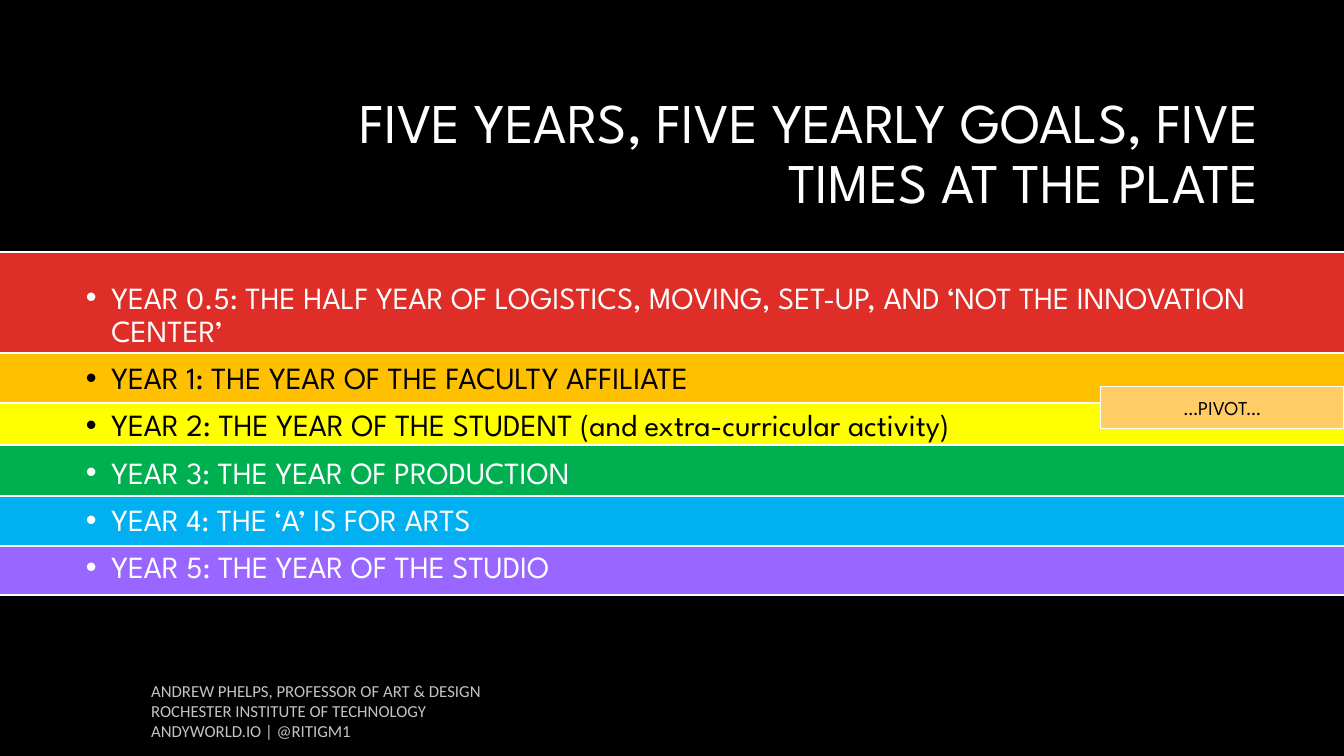
from dataclasses import dataclass

from lxml.etree import SubElement
from pptx import Presentation
from pptx.dml.color import RGBColor
from pptx.enum.shapes import MSO_CONNECTOR, MSO_SHAPE
from pptx.enum.text import MSO_ANCHOR, MSO_AUTO_SIZE, PP_ALIGN
from pptx.oxml.ns import qn
from pptx.util import Cm, Pt

SLIDE_WIDTH, SLIDE_HEIGHT = 33.87, 19.05
HEADING_FONT = "League Spartan"
WHITE, BLACK = "FFFFFF", "000000"
INDENT = Cm(0.64)


@dataclass
class Year:
    goal: str
    top: float
    fill: str
    ink: str = WHITE


YEARS = [
    Year("YEAR 0.5: THE HALF YEAR OF LOGISTICS, MOVING, SET-UP, AND ‘NOT THE INNOVATION CENTER’",
         6.35, "DF2E28"),
    Year("YEAR 1: THE YEAR OF THE FACULTY AFFILIATE", 8.89, "FFC000", BLACK),
    Year("YEAR 2: THE YEAR OF THE STUDENT (and extra-curricular activity)",
         10.16, "FFFF00", BLACK),
    Year("YEAR 3: THE YEAR OF PRODUCTION", 11.22, "00B050"),
    Year("YEAR 4: THE ‘A’ IS FOR ARTS", 12.49, "00B0F0"),
    Year("YEAR 5: THE YEAR OF THE STUDIO", 13.76, "9966FF"),
]
BANDS_BOTTOM = 14.99
EDGES = [year.top for year in YEARS] + [BANDS_BOTTOM]


def rgb(hex_code: str) -> RGBColor:
    return RGBColor.from_string(hex_code)


def place(shape, left: float, top: float, width: float, height: float) -> None:
    shape.left, shape.top = Cm(left), Cm(top)
    shape.width, shape.height = Cm(width), Cm(height)


def format_paragraph(paragraph, size: float, color: str, font: str = HEADING_FONT) -> None:
    for run in paragraph.runs:
        run.font.size = Pt(size)
        run.font.name = font
        run.font.color.rgb = rgb(color)


def add_box(slide, left: float, top: float, width: float, height: float, fill: str):
    """Add a filled rectangle without outline or shadow."""
    box = slide.shapes.add_shape(
        MSO_SHAPE.RECTANGLE, Cm(left), Cm(top), Cm(width), Cm(height))
    box.shadow.inherit = False
    box.fill.solid()
    box.fill.fore_color.rgb = rgb(fill)
    box.line.fill.background()
    return box


def add_rule(slide, top: float) -> None:
    """Add a white line across the whole slide."""
    rule = slide.shapes.add_connector(
        MSO_CONNECTOR.STRAIGHT, Cm(0), Cm(top), Cm(SLIDE_WIDTH), Cm(top))
    rule.line.color.rgb = rgb(WHITE)
    rule.line.width = Pt(1.25)
    SubElement(rule.element.spPr, qn("a:effectLst"))


def add_bullet(paragraph) -> None:
    properties = paragraph._p.get_or_add_pPr()
    properties.set("marL", str(INDENT))
    properties.set("indent", str(-INDENT))
    SubElement(properties, qn("a:buChar")).set("char", "•")


def add_footer(slide) -> None:
    footer = slide.shapes.add_textbox(Cm(3.81), Cm(17.15), Cm(18.42), Cm(1.27))
    frame = footer.text_frame
    frame.word_wrap = True
    frame.margin_left = frame.margin_top = frame.margin_right = frame.margin_bottom = 0
    frame.text = ("ANDREW PHELPS, PROFESSOR OF ART & DESIGN\n"
                  "ROCHESTER INSTITUTE OF TECHNOLOGY\n"
                  "ANDYWORLD.IO | @RITIGM1")
    for paragraph in frame.paragraphs:
        format_paragraph(paragraph, 12, "C4C4C4", "Calibri")


def fill_title(title) -> None:
    place(title, 8.05, 2.13, 23.93, 3.58)
    frame = title.text_frame
    frame.text = "FIVE YEARS, FIVE YEARLY GOALS, FIVE TIMES AT THE PLATE"
    frame.auto_size = MSO_AUTO_SIZE.NONE
    frame.vertical_anchor = MSO_ANCHOR.MIDDLE
    paragraph = frame.paragraphs[0]
    paragraph.alignment = PP_ALIGN.RIGHT
    paragraph.line_spacing = 0.9
    format_paragraph(paragraph, 40, WHITE)


def fill_goals(goals) -> None:
    place(goals, 1.91, 6.99, 30.05, 8.08)
    frame = goals.text_frame
    frame.text = "\n".join(year.goal for year in YEARS)
    frame.auto_size = MSO_AUTO_SIZE.NONE
    frame.vertical_anchor = MSO_ANCHOR.TOP
    for index, (paragraph, year) in enumerate(zip(frame.paragraphs, YEARS)):
        add_bullet(paragraph)
        paragraph.line_spacing = 0.9
        paragraph.space_before = Pt(10 if index else 0)
        format_paragraph(paragraph, 22, year.ink)


def add_pivot(slide) -> None:
    pivot = add_box(slide, 27.73, 9.74, 6.14, 1.06, "FFCC66")
    pivot.line.color.rgb = rgb(WHITE)
    pivot.line.width = Pt(1)
    frame = pivot.text_frame
    frame.text = "…PIVOT…"
    frame.vertical_anchor = MSO_ANCHOR.MIDDLE
    frame.paragraphs[0].alignment = PP_ALIGN.CENTER
    format_paragraph(frame.paragraphs[0], 14, BLACK)


def main() -> None:
    deck = Presentation()
    deck.slide_width, deck.slide_height = Cm(SLIDE_WIDTH), Cm(SLIDE_HEIGHT)
    slide = deck.slides.add_slide(deck.slide_layouts[1])
    slide.background.fill.solid()
    slide.background.fill.fore_color.rgb = rgb(BLACK)
    title, goals = slide.placeholders

    add_footer(slide)
    for year, bottom in zip(YEARS, EDGES[1:]):
        add_box(slide, 0, year.top, SLIDE_WIDTH, bottom - year.top, year.fill)

    fill_title(title)
    fill_goals(goals)
    for placeholder in (title, goals):  # bring the text in front of the bands
        slide.shapes.element.append(placeholder.element)

    for edge in EDGES:
        add_rule(slide, edge)
    add_pivot(slide)
    deck.save("out.pptx")


if __name__ == "__main__":
    main()
